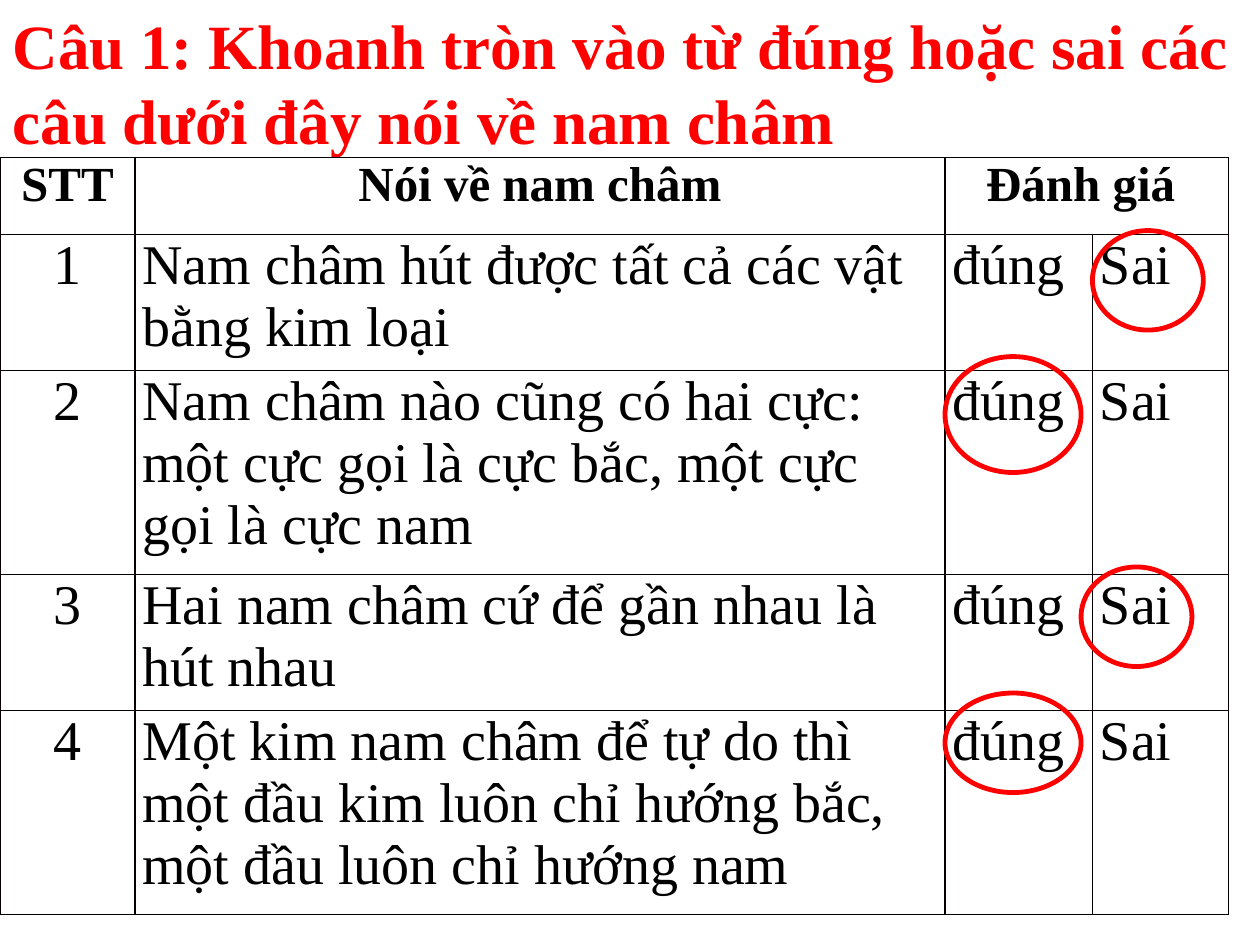
import pptx
import pptx.util
import pptx.dml.color
import pptx.enum.shapes
import pptx.enum.text
import pptx.oxml
from pptx.util import Inches

FONT = "Times New Roman"
RED, BLACK, BORDER = "FF0000", "000000", "080000"
ALIGN = pptx.enum.text.PP_ALIGN


def color(hex_value):
    return pptx.dml.color.RGBColor.from_string(hex_value)


def format_text(frame, size, bold, text_color, align):
    for paragraph in frame.paragraphs:
        paragraph.alignment = align
        for run in paragraph.runs:
            run.font.name = FONT
            run.font.size = pptx.util.Pt(size)
            run.font.bold = bold
            run.font.color.rgb = color(text_color)


presentation = pptx.Presentation()
presentation.slide_width = Inches(10)
presentation.slide_height = Inches(7.5)
slide = presentation.slides.add_slide(presentation.slide_layouts[5])

# Question
question = slide.shapes.title
question.left, question.top = Inches(0), Inches(0)
question.width, question.height = Inches(10), Inches(1.31)
question.text_frame.text = "Câu 1: Khoanh tròn vào từ đúng hoặc sai các câu dưới đây nói về nam châm"
question.text_frame.word_wrap = True
question.text_frame.auto_size = pptx.enum.text.MSO_AUTO_SIZE.NONE
question.text_frame.vertical_anchor = pptx.enum.text.MSO_ANCHOR.TOP
format_text(question.text_frame, 36, True, RED, ALIGN.LEFT)

# Table of statements
statements = [
    "Nam châm hút được tất cả các vật bằng kim loại",
    "Nam châm nào cũng có hai cực: một cực gọi là cực bắc, một cực gọi là cực nam",
    "Hai nam châm cứ để gần nhau là hút nhau",
    "Một kim nam châm để tự do thì một đầu kim luôn chỉ hướng bắc, một đầu luôn chỉ hướng nam",
]
rows = [["STT", "Nói về nam châm", "Đánh giá ", ""]]
rows += [[str(number), statement, "đúng", "Sai"]
         for number, statement in enumerate(statements, start=1)]
column_widths = [1.07, 6.43, 1.17, 1.08]
row_heights = [0.61, 1.08, 1.62, 1.08, 1.62]

table = slide.shapes.add_table(
    len(rows), len(column_widths), Inches(0), Inches(1.25), Inches(9.75), Inches(6)
).table
table.first_row = table.horz_banding = False
for column, width in zip(table.columns, column_widths):
    column.width = Inches(width)
for row, height in zip(table.rows, row_heights):
    row.height = Inches(height)
table.cell(0, 2).merge(table.cell(0, 3))

for r, texts in enumerate(rows):
    for c, text in enumerate(texts):
        cell = table.cell(r, c)
        cell.margin_left = cell.margin_right = Inches(0.06)
        cell.margin_top = cell.margin_bottom = Inches(0)
        if text:
            cell.text_frame.text = text
        header = r == 0
        format_text(cell.text_frame, 28 if header else 32, header, BLACK,
                    ALIGN.CENTER if header or c == 0 else ALIGN.LEFT)

        # Borders come before the fill in the cell properties
        properties = cell._tc.get_or_add_tcPr()
        for side in ("lnL", "lnR", "lnT", "lnB"):
            properties.append(pptx.oxml.parse_xml(
                f'<a:{side} xmlns:a="http://schemas.openxmlformats.org/drawingml/2006/main" w="12700">'
                f'<a:solidFill><a:srgbClr val="{BORDER}"/></a:solidFill></a:{side}>'))
        cell.fill.background()

# Circles around the right answers
answer_circles = [
    (8.67, 1.83, 0.88, 0.79),
    (7.5, 2.83, 1.08, 0.92),
    (8.58, 4.5, 0.88, 0.79),
    (7.5, 5.5, 1.08, 0.79),
]
for bounds in answer_circles:
    circle = slide.shapes.add_shape(
        pptx.enum.shapes.MSO_SHAPE.OVAL, *[Inches(value) for value in bounds])
    circle.shadow.inherit = False
    circle.fill.background()
    circle.line.color.rgb = color(RED)
    circle.line.width = pptx.util.Pt(2.75)

presentation.save("out.pptx")
